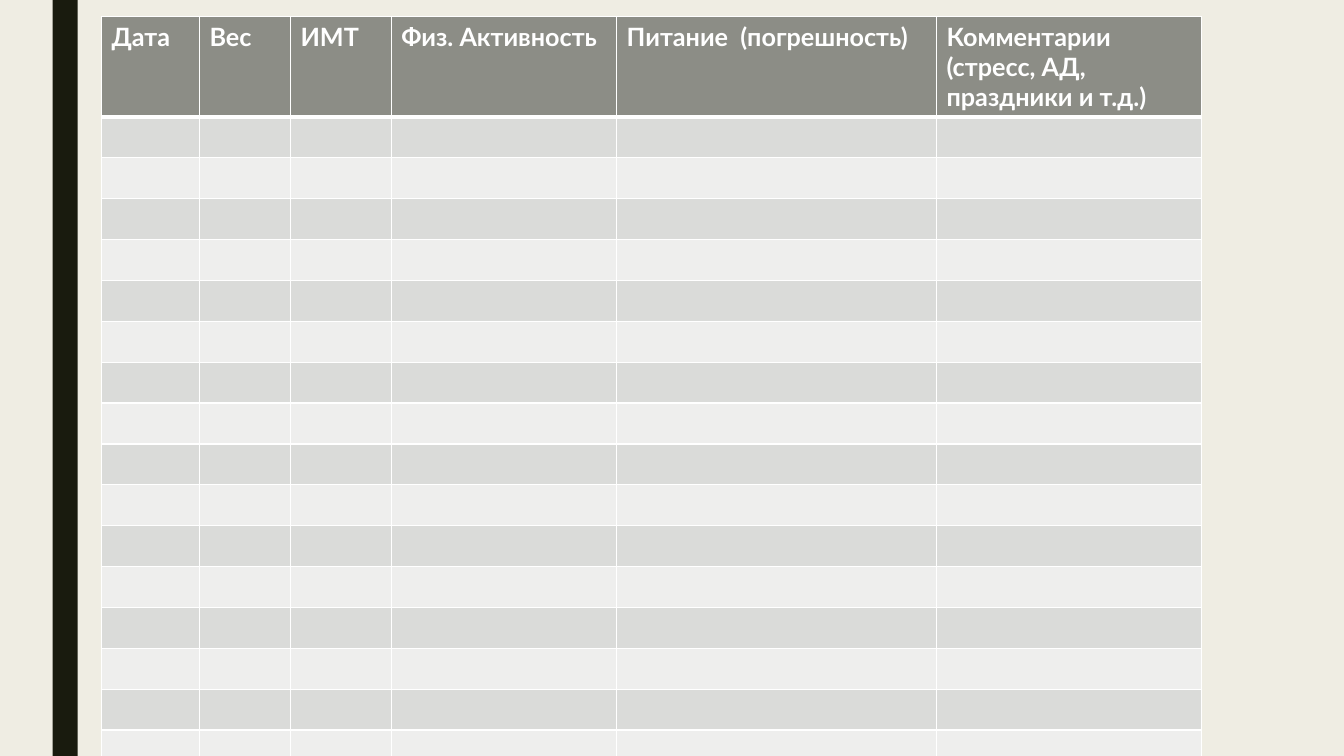
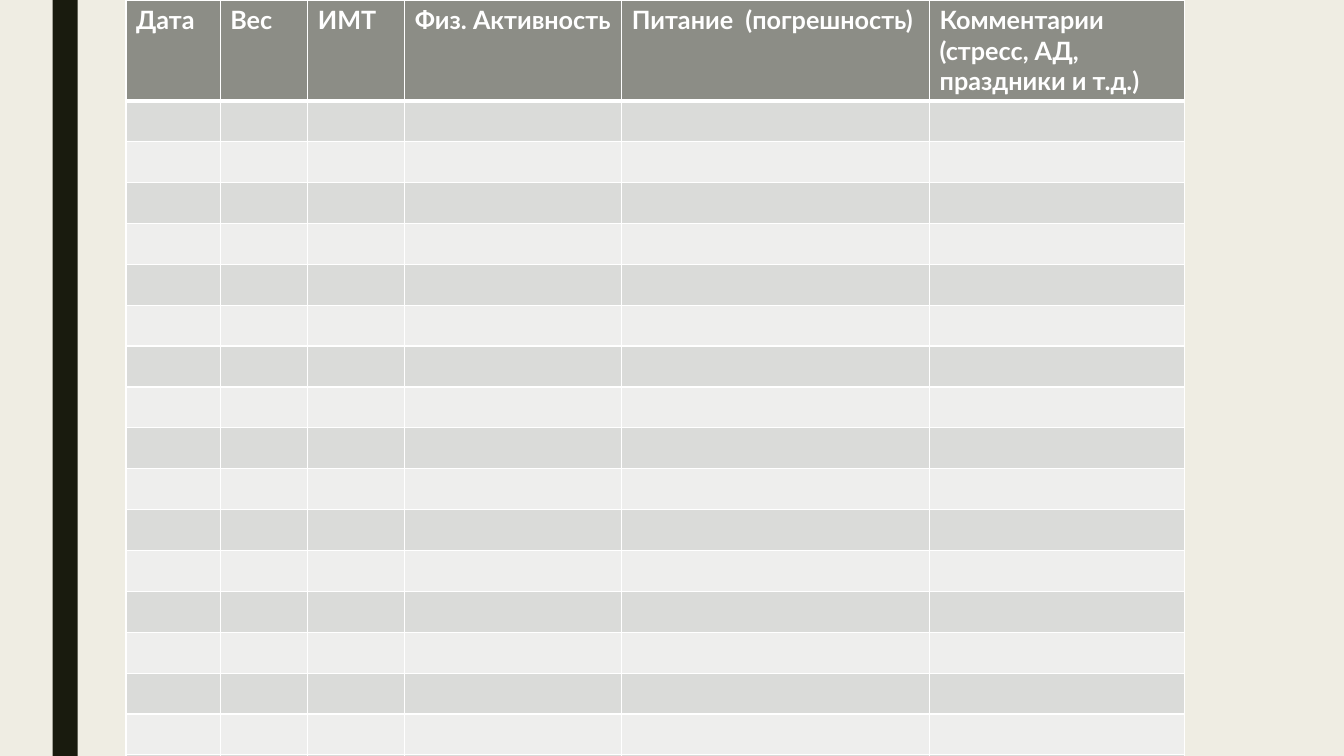
"""Build two blank diary tables for tracking weight, activity and nutrition."""
from lxml.etree import SubElement
from pptx import Presentation
from pptx.dml.color import RGBColor
from pptx.enum.shapes import MSO_SHAPE as Preset
from pptx.oxml.ns import qn
from pptx.util import Pt

HEADINGS = [
    ("Дата", 70),
    ("Вес", 65),
    ("ИМТ", 72),
    ("Физ. Активность", 161),
    ("Питание  (погрешность)", 228.5),
    ("Комментарии (стресс, АД, праздники и т.д.)", 189),
]
DIARIES = [
    {"left": 72.5, "top": 11.5, "width": 785.5, "entry_height": 28.83},
    {"left": 90, "top": 0, "width": 756, "entry_height": 29.2},
]
ENTRIES = 29
HEADING_HEIGHT = 72
SLIDE_WIDTH, SLIDE_HEIGHT = 960, 540
BAND_LEFT, BAND_WIDTH = 37.5, 18
FONT = "Lato"
PAPER, INK, WHITE = "EFEDE3", "191B0E", "FFFFFF"
HEADING_FILL, ENTRY_FILLS = "8C8D86", ("DADBD9", "EEEEED")
THIN, THICK = 1, 3


def paint(fill, color):
    fill.solid()
    fill.fore_color.rgb = RGBColor.from_string(color)


def write(frame, text, size=18, color=WHITE, bold=False):
    paragraph = frame.paragraphs[0]
    paragraph.text = text
    font = paragraph.runs[0].font
    font.name, font.size, font.bold = FONT, Pt(size), bold
    font.color.rgb = RGBColor.from_string(color)


def rule_cell(cell, top, bottom):
    properties = cell._tc.get_or_add_tcPr()
    for side, weight in (("L", THIN), ("R", THIN), ("T", top), ("B", bottom)):
        border = SubElement(properties, qn(f"a:ln{side}"), w=str(Pt(weight)))
        SubElement(SubElement(border, qn("a:solidFill")), qn("a:srgbClr"), val=WHITE)


def style_layout(layout, slide):
    paint(layout.background.fill, PAPER)
    for placeholder in list(layout.placeholders):
        layout.shapes.element.remove(placeholder.element)
    band = slide.shapes.add_shape(
        Preset.RECTANGLE, Pt(BAND_LEFT), 0, Pt(BAND_WIDTH), Pt(SLIDE_HEIGHT))
    band.shadow.inherit = False
    paint(band.fill, INK)
    band.line.fill.background()
    layout.shapes.element.append(band.element)


def add_diary(slide, left, top, width, entry_height):
    height = HEADING_HEIGHT + ENTRIES * entry_height
    diary = slide.shapes.add_table(
        ENTRIES + 1, len(HEADINGS), Pt(left), Pt(top), Pt(width), Pt(height)).table
    scale = width / sum(share for _, share in HEADINGS)
    for column, (heading, share) in zip(diary.columns, HEADINGS):
        column.width = Pt(share * scale)
    for index, row in enumerate(diary.rows):
        row.height = Pt(entry_height if index else HEADING_HEIGHT)
        color = ENTRY_FILLS[(index - 1) % 2] if index else HEADING_FILL
        for cell in row.cells:
            rule_cell(cell, THICK if index == 1 else THIN, THIN if index else THICK)
            paint(cell.fill, color)
    for cell, (heading, _) in zip(diary.rows[0].cells, HEADINGS):
        write(cell.text_frame, heading, bold=True)


def main():
    deck = Presentation()
    deck.slide_width, deck.slide_height = Pt(SLIDE_WIDTH), Pt(SLIDE_HEIGHT)
    blank = deck.slide_layouts[6]
    slides = [deck.slides.add_slide(blank) for _ in DIARIES]
    style_layout(blank, slides[0])
    for slide, diary in zip(slides, DIARIES):
        add_diary(slide, **diary)
    deck.save("out.pptx")


if __name__ == "__main__":
    main()
